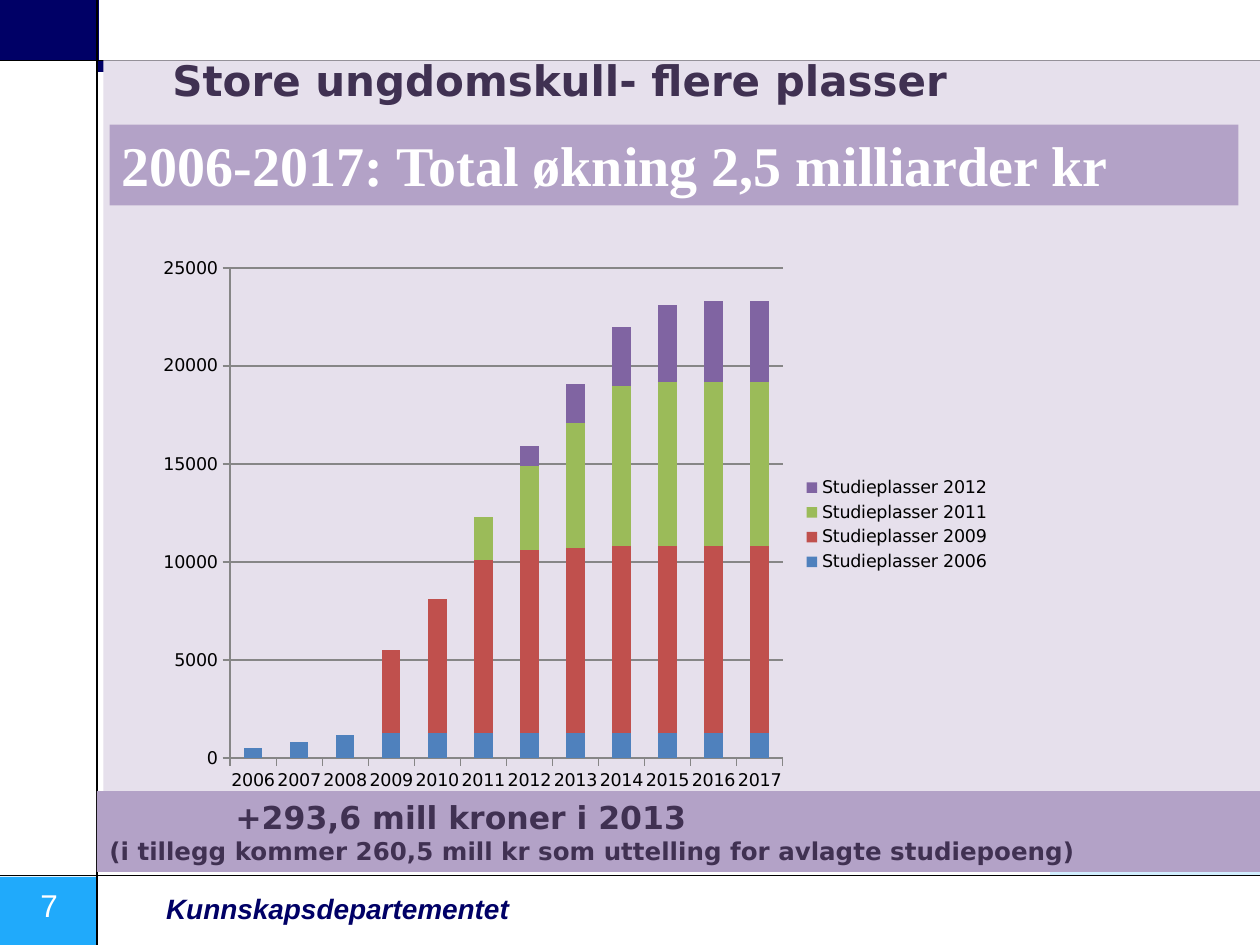
from lxml.etree import SubElement
from pptx import Presentation
from pptx.chart.data import CategoryChartData
from pptx.dml.color import RGBColor
from pptx.enum.chart import XL_CHART_TYPE, XL_LEGEND_POSITION, XL_TICK_MARK
from pptx.enum.shapes import MSO_CONNECTOR, MSO_SHAPE
from pptx.enum.text import MSO_ANCHOR, PP_ALIGN
from pptx.oxml.ns import qn
from pptx.util import Inches, Pt

WIDE, HIGH = 10, 7.5
SIDE, TOP, FOOT = 0.77, 0.48, 6.95  # frame lines
NAVY, SKY, PLUM, LILAC, PALE = "000066", "20AAFB", "403152", "B3A2C7", "E6E0EC"
SANS, GRID = "DejaVu Sans", "868686"

YEARS = [str(year) for year in range(2006, 2018)]
PLACES = [  # name, colour, values up to 2017
    ("Studieplasser 2006", "4F81BD", [500, 800, 1200] + [1300] * 9),
    ("Studieplasser 2009", "C0504D",
     [4200, 6800, 8800, 9300, 9400, 9500, 9500, 9500, 9500]),
    ("Studieplasser 2011", "9BBB59", [2200, 4300, 6400, 8200, 8400, 8400, 8400]),
    ("Studieplasser 2012", "8064A2", [1000, 2000, 3000, 3900, 4100, 4100]),
]
PLOT = {"x": 0.098, "y": 0.036, "w": 0.645, "h": 0.886}  # shares of the chart
RULES = [(0, TOP, WIDE, TOP), (WIDE, FOOT, 0, FOOT), (SIDE, 0, SIDE, HIGH)]

deck = Presentation()
deck.slide_width, deck.slide_height = Inches(WIDE), Inches(HIGH)
slide = deck.slides.add_slide(deck.slide_layouts[6])
shapes = slide.shapes


def paint(part, hue):
    part.solid()
    part.fore_color.rgb = RGBColor.from_string(hue)


def block(x, y, w, h, hue=None, edge=None, alpha=None):
    box = shapes.add_shape(MSO_SHAPE.RECTANGLE, *map(Inches, (x, y, w, h)))
    box.shadow.inherit = False
    if hue:
        paint(box.fill, hue)
    else:
        box.fill.background()
    if edge:
        paint(box.line.fill, edge)
        box.line.width = Pt(0.75)
    else:
        box.line.fill.background()
    if alpha:
        tone = box.fill._xPr.find(qn("a:solidFill"))[0]
        SubElement(tone, qn("a:alpha"), val=str(alpha * 1000))
    return box


def write(box, text, size, hue, font=SANS, bold=True, italic=False,
          align=PP_ALIGN.LEFT, anchor=MSO_ANCHOR.TOP, indent=0, more=False):
    """Fill the first paragraph, or add one when more is set."""
    frame = box.text_frame
    frame.word_wrap = True
    frame.vertical_anchor = anchor
    para = frame.add_paragraph() if more else frame.paragraphs[0]
    para.alignment = align
    if indent:
        para._p.get_or_add_pPr().set("marL", str(Inches(indent)))
    run = para.add_run()
    run.text = text
    run.font.name, run.font.size = font, Pt(size)
    run.font.bold, run.font.italic = bold, italic
    run.font.color.rgb = RGBColor.from_string(hue)


def rule(*ends):
    line = shapes.add_connector(MSO_CONNECTOR.STRAIGHT, *map(Inches, ends))
    paint(line.line.fill, "000000")
    line.line.width = Pt(0.75)
    SubElement(line._element.spPr, qn("a:effectLst"))


def place(plot):
    """Fix the inner plot area at the given shares of the chart."""
    area = plot._element.getparent()
    old = area.find(qn("c:layout"))
    if old is not None:
        area.remove(old)
    layout = area.makeelement(qn("c:layout"))
    area.insert(0, layout)
    manual = SubElement(layout, qn("c:manualLayout"))
    SubElement(manual, qn("c:layoutTarget"), val="inner")
    for key in "xy":
        SubElement(manual, qn(f"c:{key}Mode"), val="edge")
    for key, share in PLOT.items():
        SubElement(manual, qn(f"c:{key}"), val=str(share))


def draw_chart(x, y, w, h):
    data = CategoryChartData()
    data.categories = YEARS
    for name, _, vals in PLACES:
        data.add_series(name, [None] * (len(YEARS) - len(vals)) + vals)
    chart = shapes.add_chart(XL_CHART_TYPE.COLUMN_STACKED,
                             *map(Inches, (x, y, w, h)), data).chart
    chart.has_title = False
    chart.font.name, chart.font.size = SANS, Pt(10)
    chart.font.color.rgb = RGBColor.from_string("000000")
    chart.has_legend = True
    chart.legend.position = XL_LEGEND_POSITION.RIGHT
    chart.legend.include_in_layout = False
    plot = chart.plots[0]
    plot.vary_by_categories = False
    plot.overlap, plot.gap_width = 100, 150
    for series, (_, hue, _) in zip(plot.series, PLACES):
        paint(series.format.fill, hue)
    value = chart.value_axis
    value.minimum_scale, value.maximum_scale, value.major_unit = 0, 25000, 5000
    value.has_major_gridlines = True
    paint(value.major_gridlines.format.line.fill, GRID)
    for axis in (chart.category_axis, value):
        axis.major_tick_mark = XL_TICK_MARK.OUTSIDE
        paint(axis.format.line.fill, GRID)
    place(plot)


# Frame
block(0, 6.96, SIDE, 0.55, SKY)
write(block(0, 6.98, 0.78, 0.4), "7", 18, "FFFFFF", font="Arial", bold=False,
      align=PP_ALIGN.CENTER)
block(SIDE, TOP, 0.59, 0.09, NAVY)
block(WIDE * 5 / 6, TOP, WIDE / 6, FOOT - TOP, SKY, alpha=20)
block(-0.01, -0.01, 0.79, 0.49, NAVY, edge=NAVY)
write(block(1.22, 7.03, 7.42, 0.37, "FFFFFF"), "Kunnskapsdepartementet", 16,
      NAVY, font="Arial", italic=True)
for ends in RULES:
    rule(*ends)

# Content
block(0.82, TOP, WIDE - 0.82, 6.42, PALE)
title = shapes.add_textbox(*map(Inches, (1.27, 0.28, 7.04, 0.7)))
write(title, "Store ungdomskull- flere plasser", 24, PLUM,
      anchor=MSO_ANCHOR.MIDDLE)
draw_chart(1.16, 1.97, 6.8, 4.39)
note = block(SIDE, 6.28, WIDE - SIDE, 0.64, LILAC)
write(note, "+293,6 mill kroner i 2013", 18, PLUM, indent=1)
write(note, "(i tillegg kommer 260,5 mill kr som uttelling for avlagte studiepoeng)",
      14, PLUM, anchor=MSO_ANCHOR.MIDDLE, more=True)
write(block(0.87, 0.99, 8.96, 0.64, LILAC),
      "2006-2017: Total økning 2,5 milliarder kr", 32, "FFFFFF",
      font="Times New Roman")

deck.save("out.pptx")
